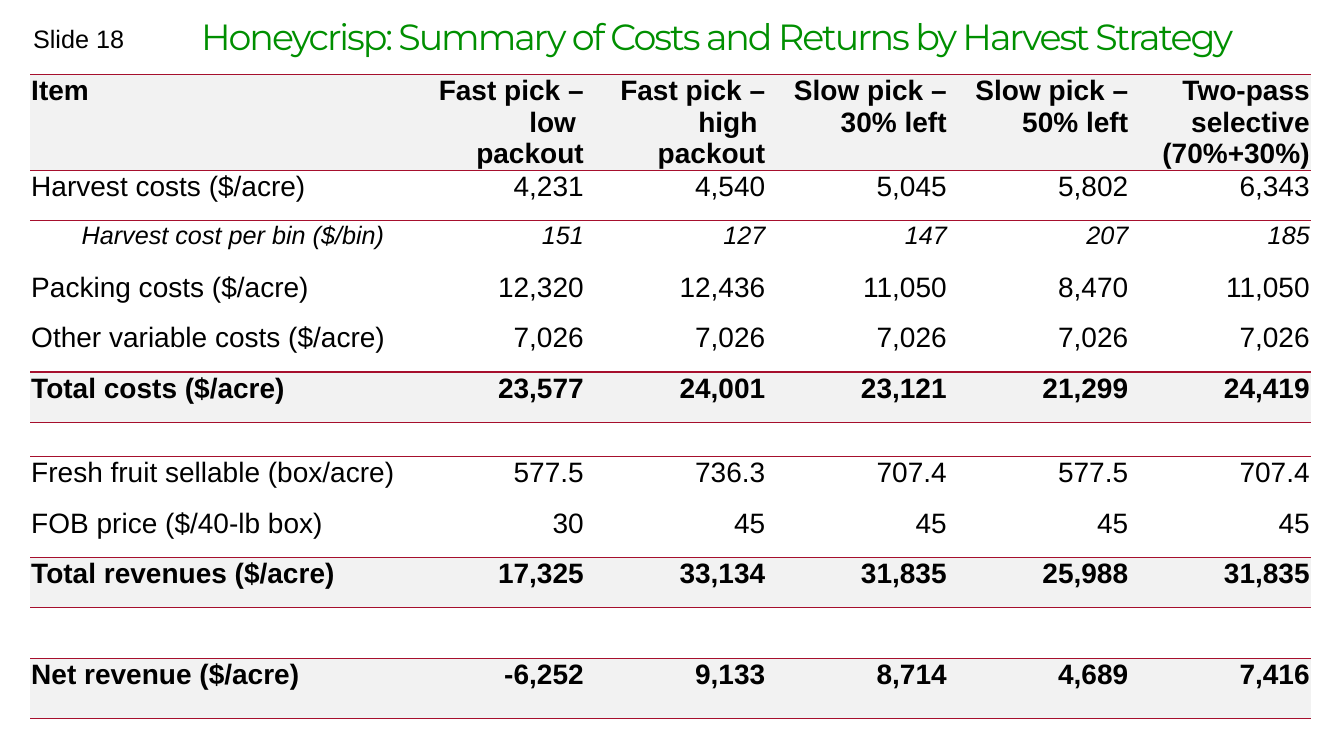
from dataclasses import dataclass

from lxml.etree import SubElement
from pptx import Presentation
from pptx.dml.color import RGBColor
from pptx.enum.text import MSO_ANCHOR, MSO_AUTO_SIZE, PP_ALIGN
from pptx.oxml.ns import qn
from pptx.util import Inches, Pt


@dataclass(frozen=True)
class Theme:
    """Colours, fonts and type sizes of the slide."""
    title_color: RGBColor = RGBColor(0x00, 0x8F, 0x00)
    text_color: RGBColor = RGBColor(0, 0, 0)
    shade: RGBColor = RGBColor(0xF2, 0xF2, 0xF2)
    rule: str = "A60F2D"
    title_font: str = "Montserrat"
    body_font: str = "Arial"
    title_size: Pt = Pt(26)
    body_size: Pt = Pt(20)
    small_size: Pt = Pt(18)


THEME = Theme()
NO_GRID_STYLE = "{2D5ABB26-0587-4C30-8999-92F81FD0307C}"
BODY = {"name": THEME.body_font, "size": THEME.body_size, "bold": False}
STYLES = {
    "total": {**BODY, "bold": True},
    "plain": BODY,
    "detail": {**BODY, "size": THEME.small_size, "italic": True},
}
COLUMN_WIDTHS = [3.7] + [1.8] * 5
BLANK_ROW = ("plain", 0.5, [""] * 6)
ROWS = [
    ("total", 0.78, ["Item", "Fast pick – low \npackout", "Fast pick – high \npackout",
                     "Slow pick – 30% left", "Slow pick – 50% left",
                     "Two-pass selective (70%+30%)"]),
    ("plain", 0.5, ["Harvest costs ($/acre)", "4,231", "4,540", "5,045", "5,802", "6,343"]),
    ("detail", 0.5, ["Harvest cost per bin ($/bin)", "151", "127", "147", "207", "185"]),
    ("plain", 0.5, ["Packing costs ($/acre)", "12,320", "12,436", "11,050", "8,470", "11,050"]),
    ("plain", 0.5, ["Other variable costs ($/acre)"] + ["7,026"] * 5),
    ("total", 0.5, ["Total costs ($/acre)", "23,577", "24,001", "23,121", "21,299", "24,419"]),
    ("plain", 0.34, [""] * 6),
    ("plain", 0.5, ["Fresh fruit sellable (box/acre)", "577.5", "736.3", "707.4", "577.5",
                    "707.4"]),
    ("plain", 0.5, ["FOB price ($/40-lb box)", "30", "45", "45", "45", "45"]),
    ("total", 0.5, ["Total revenues ($/acre)", "17,325", "33,134", "31,835", "25,988",
                    "31,835"]),
    BLANK_ROW,
    ("total", 0.6, ["Net revenue ($/acre)", "-6,252", "9,133", "8,714", "4,689", "7,416"]),
]


def set_all(target, values):
    """Set each attribute named in a dict."""
    for name, value in values.items():
        setattr(target, name, value)


def add_run(p, text, font, color):
    """Add one formatted run to a paragraph."""
    r = p.add_run()
    r.text = text
    set_all(r.font, font)
    r.font.color.rgb = color
    return r


def add_title(s, text):
    """Place and format the title placeholder."""
    sp = s.shapes.title
    set_all(sp, {"left": Inches(0.71), "top": Inches(0.19),
                 "width": Inches(12.81), "height": Inches(0.55)})
    tf = sp.text_frame
    set_all(tf, {"margin_left": 0, "margin_right": 0, "margin_top": 0, "margin_bottom": 0,
                 "word_wrap": True, "auto_size": MSO_AUTO_SIZE.NONE,
                 "vertical_anchor": MSO_ANCHOR.TOP})
    p = tf.paragraphs[0]
    set_all(p, {"alignment": PP_ALIGN.CENTER, "line_spacing": 0.9})
    font = {"name": THEME.title_font, "size": THEME.title_size}
    r = add_run(p, text, font, THEME.title_color)
    r.font._element.set("spc", "-150")


def add_label(s, text):
    """Add the slide label at the top left."""
    sp = s.shapes.add_textbox(Inches(0.23), Inches(0.18), Inches(1.17), Inches(0.4))
    tf = sp.text_frame
    set_all(tf, {"word_wrap": True, "auto_size": MSO_AUTO_SIZE.SHAPE_TO_FIT_TEXT})
    font = {"name": THEME.body_font, "size": THEME.small_size}
    add_run(tf.paragraphs[0], text, font, THEME.text_color)


def add_rule(cell, edge):
    """Draw a one-point rule on one edge of a cell."""
    ln = SubElement(cell._tc.get_or_add_tcPr(), qn(f"a:{edge}"), w=str(Pt(1)))
    fill = SubElement(ln, qn("a:solidFill"))
    SubElement(fill, qn("a:srgbClr"), val=THEME.rule)


def fill_cell(cell, text, kind, is_label):
    """Write and format the text of one cell."""
    margin = Inches(0.01)
    set_all(cell, {"margin_left": margin, "margin_right": margin,
                   "margin_top": margin, "margin_bottom": margin})
    tf = cell.text_frame
    for i, line in enumerate(text.split("\n") if text else []):
        p = tf.add_paragraph() if i else tf.paragraphs[0]
        p.alignment = PP_ALIGN.LEFT if is_label else PP_ALIGN.RIGHT
        if is_label and kind == "detail":
            p.level = 1
            set_all_indent = p._p.get_or_add_pPr()
            set_all_indent.set("marL", str(Inches(0.5)))
            set_all_indent.set("indent", "0")
        add_run(p, line, STYLES[kind], THEME.text_color)


def add_cost_table(s):
    """Add the table, with ruled and shaded total rows."""
    frame = s.shapes.add_table(len(ROWS), len(COLUMN_WIDTHS), Inches(0.3), Inches(0.74),
                               Inches(12.7), Inches(6.45))
    table = frame.table
    set_all(table, {"first_row": False, "horz_banding": False})
    table._tbl.tblPr.find(qn("a:tableStyleId")).text = NO_GRID_STYLE
    for column, width in zip(table.columns, COLUMN_WIDTHS):
        column.width = Inches(width)
    kinds = [kind for kind, _, _ in ROWS]
    for i, (kind, height, texts) in enumerate(ROWS):
        table.rows[i].height = Inches(height)
        edges = {"lnT": kinds[max(i - 1, 0):i + 1], "lnB": kinds[i:i + 2]}
        for j, text in enumerate(texts):
            cell = table.cell(i, j)
            fill_cell(cell, text, kind, j == 0)
            for edge, neighbours in edges.items():
                if "total" in neighbours:
                    add_rule(cell, edge)
            if kind == "total":
                cell.fill.solid()
                cell.fill.fore_color.rgb = THEME.shade
            else:
                cell.fill.background()
    frame.height = Inches(6.45)


def main():
    """Build the slide and save it."""
    prs = Presentation()
    set_all(prs, {"slide_width": Inches(13.33), "slide_height": Inches(7.5)})
    s = prs.slides.add_slide(prs.slide_layouts[5])
    add_title(s, "Honeycrisp: Summary of Costs and Returns by Harvest Strategy")
    add_cost_table(s)
    add_label(s, "Slide 18")
    prs.save("out.pptx")


if __name__ == "__main__":
    main()
